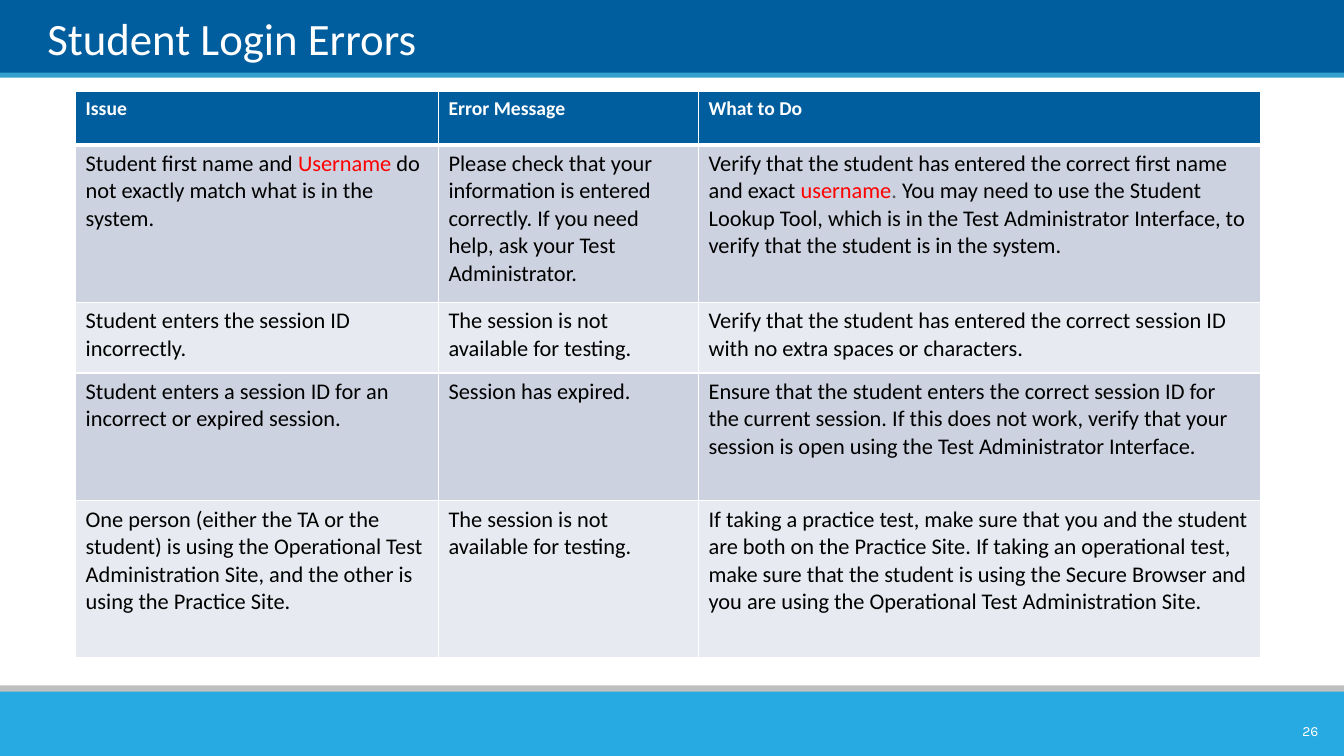
from dataclasses import dataclass

from lxml import etree
from pptx import Presentation
from pptx.dml.color import RGBColor
from pptx.enum import shapes, text
from pptx.oxml import ns
from pptx.util import Pt


@dataclass(frozen=True)
class Theme:
    navy: str = "005E9E"
    sky: str = "35A0CE"
    gray: str = "BFBFBF"
    blue: str = "27AAE1"
    white: str = "FFFFFF"
    black: str = "000000"
    red: str = "FF0000"
    slate: str = "53565A"
    dark: str = "CCD2DF"
    light: str = "E7EAF0"
    font: str = "Calibri"
    num_font: str = "Karla"
    title: int = 32
    head: int = 14
    body: int = 16
    num: int = 10


T = Theme()
WIDE, HIGH = 960, 540
COLS = [259.2, 185.8, 401.7]
ROWS = [38.2, 112.3, 50.4, 91.4, 112.3]
HEAD = ["Issue", "Error Message", "What to Do"]
CLOSED = "The session is not available for testing."
# A cell is a string, or a list of (words, colour) runs.
BODY = [
    [
        [("Student first name and ", T.black), ("Username ", T.red),
         ("do not exactly match what is in the system.", T.black)],
        "Please check that your information is entered correctly. "
        "If you need help, ask your Test Administrator.",
        [("Verify that the student has entered the correct first name and exact ", T.black),
         ("username", T.red), (". ", T.slate),
         ("You may need to use the Student Lookup Tool, which is in the Test "
          "Administrator Interface, to verify that the student is in the system.", T.black)],
    ],
    [
        "Student enters the session ID incorrectly.",
        CLOSED,
        "Verify that the student has entered the correct session ID "
        "with no extra spaces or characters.",
    ],
    [
        "Student enters a session ID for an incorrect or expired session.",
        "Session has expired.",
        "Ensure that the student enters the correct session ID for the current session. "
        "If this does not work, verify that your session is open using the "
        "Test Administrator Interface.",
    ],
    [
        "One person (either the TA or the student) is using the Operational Test "
        "Administration Site, and the other is using the Practice Site.",
        CLOSED,
        "If taking a practice test, make sure that you and the student are both on the "
        "Practice Site. If taking an operational test, make sure that the student is using "
        "the Secure Browser and you are using the Operational Test Administration Site.",
    ],
]


def style(run, size, color, font=T.font, bold=False):
    run.font.size = Pt(size)
    run.font.name = font
    run.font.bold = bold
    run.font.color.rgb = RGBColor.from_string(color)


def band(slide, top, height, color):
    """Draw a plain bar over the full slide width."""
    bar = slide.shapes.add_shape(shapes.MSO_SHAPE.RECTANGLE, 0, Pt(top), Pt(WIDE), Pt(height))
    bar.shadow.inherit = False
    bar.fill.solid()
    bar.fill.fore_color.rgb = RGBColor.from_string(color)
    bar.line.fill.background()


def header(slide, left, top, width, height):
    """Draw the top bars and put the title in the given box."""
    band(slide, -0.7, 54, T.navy)
    band(slide, 51.8, 3.6, T.sky)
    title = slide.shapes.title
    slide.shapes._spTree.append(title._element)  # in front of the bars
    title.left, title.top, title.width, title.height = map(Pt, (left, top, width, height))
    frame = title.text_frame
    frame.text = "Student Login Errors"
    frame.auto_size = text.MSO_AUTO_SIZE.NONE
    frame.vertical_anchor = text.MSO_ANCHOR.BOTTOM
    frame.margin_left = frame.margin_right = frame.margin_top = frame.margin_bottom = 0
    para = frame.paragraphs[0]
    para.alignment = text.PP_ALIGN.LEFT
    style(para.runs[0], T.title, T.white)


def footer(slide, top):
    """Draw the bottom bars and the page number, downwards from top."""
    band(slide, top, 10, T.gray)
    band(slide, top + 4.5, HIGH - top - 4.5, T.blue)
    box = slide.shapes.add_textbox(Pt(920), Pt(top + 22.3), Pt(28.8), Pt(20.9))
    frame = box.text_frame
    frame.word_wrap = True
    frame.vertical_anchor = text.MSO_ANCHOR.MIDDLE
    frame.text = "26"
    para = frame.paragraphs[0]
    para.alignment = text.PP_ALIGN.RIGHT
    style(para.runs[0], T.num, T.white, T.num_font)


def border(cell, row):
    """Give a cell white edges, thick between the head row and the body."""
    props = cell._tc.get_or_add_tcPr()
    widths = {"lnL": 1, "lnR": 1, "lnT": 3 if row == 1 else 1, "lnB": 3 if row == 0 else 1}
    for place, (tag, width) in enumerate(widths.items()):
        line = etree.Element(ns.qn("a:" + tag), w=str(Pt(width)))
        fill = etree.SubElement(line, ns.qn("a:solidFill"))
        etree.SubElement(fill, ns.qn("a:srgbClr"), val=T.white)
        props.insert(place, line)


def fill_cell(cell, row, words):
    """Write one table cell; row 0 is the head row."""
    head = row == 0
    color = T.navy if head else T.dark if row % 2 else T.light
    cell.fill.solid()
    cell.fill.fore_color.rgb = RGBColor.from_string(color)
    border(cell, row)
    if isinstance(words, str):
        words = [(words, T.white if head else T.black)]
    para = cell.text_frame.paragraphs[0]
    for part, ink in words:
        run = para.add_run()
        run.text = part
        style(run, T.head if head else T.body, ink, bold=head)


def errors(slide, left, top):
    """Place the table of login errors with its corner at left, top."""
    frame = slide.shapes.add_table(len(ROWS), len(COLS), Pt(left), Pt(top),
                                   Pt(sum(COLS)), Pt(sum(ROWS)))
    table = frame.table
    for col, width in zip(table.columns, COLS):
        col.width = Pt(width)
    for row, (height, cells) in enumerate(zip(ROWS, [HEAD, *BODY])):
        table.rows[row].height = Pt(height)
        for col, words in enumerate(cells):
            fill_cell(table.cell(row, col), row, words)


def main():
    deck = Presentation()
    deck.slide_width, deck.slide_height = Pt(WIDE), Pt(HIGH)
    slide = deck.slides.add_slide(deck.slide_layouts[5])
    header(slide, 33.8, 5, 867.6, 41)
    errors(slide, 54, 65.5)
    footer(slide, 489.6)
    deck.save("out.pptx")


if __name__ == "__main__":
    main()
